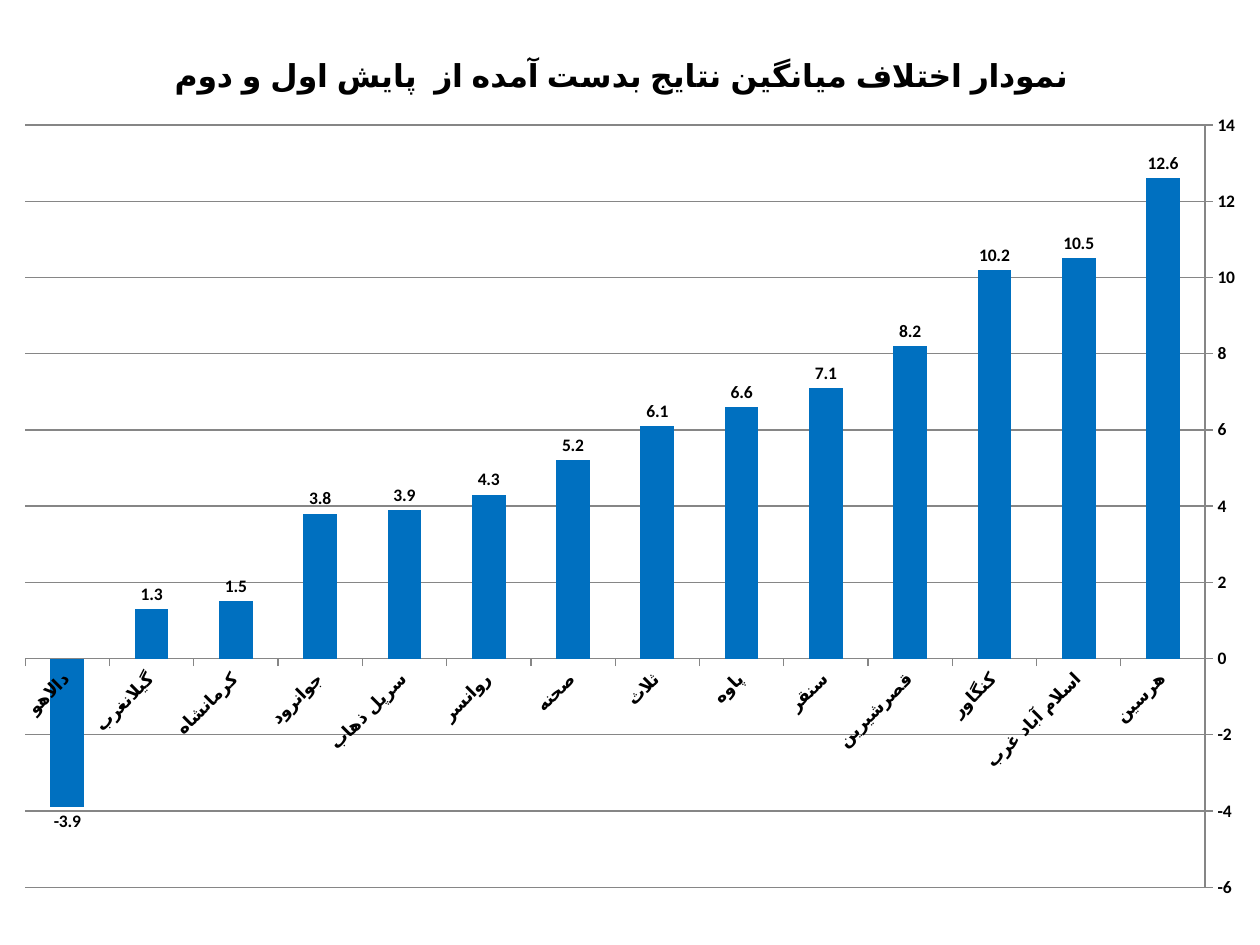
from dataclasses import dataclass

from lxml import etree
from pptx import Presentation
from pptx.chart.data import CategoryChartData
from pptx.dml.color import RGBColor
from pptx.enum import chart as ch
from pptx.oxml import ns
from pptx.util import Pt


@dataclass(frozen=True)
class Theme:
    font: str = "Calibri"
    ink: str = "000000"
    bar: str = "0070C0"
    grid: str = "868686"
    title: int = 18
    body: int = 10


THEME = Theme()
WIDE, HIGH = 720, 506  # chart size in points
TITLE = "نمودار اختلاف میانگین نتایج بدست آمده از  پایش اول و دوم  "
SCORES = {
    "هرسین": 12.6,
    "اسلام آباد غرب": 10.5,
    "کنگاور": 10.2,
    "قصرشیرین": 8.2,
    "سنقر": 7.1,
    "پاوه": 6.6,
    "ثلاث": 6.1,
    "صحنه": 5.2,
    "روانسر": 4.3,
    "سرپل ذهاب": 3.9,
    "جوانرود": 3.8,
    "کرمانشاه": 1.5,
    "گیلانغرب": 1.3,
    "دالاهو": -3.9,
}


def style(font, size, bold=True):
    font.name, font.size, font.bold = THEME.font, Pt(size), bold
    font.color.rgb = RGBColor.from_string(THEME.ink)


def rule(line):
    line.color.rgb = RGBColor.from_string(THEME.grid)
    line.width = Pt(0.75)


def add_bars(slide):
    data = CategoryChartData(number_format="General")
    data.categories = list(SCORES)
    data.add_series("Series 1", list(SCORES.values()))
    frame = slide.shapes.add_chart(
        ch.XL_CHART_TYPE.COLUMN_CLUSTERED,
        Pt(0), Pt(16.5), Pt(WIDE), Pt(HIGH), data)
    chart = frame.chart
    chart.has_legend = False
    style(chart.font, THEME.body, False)
    return chart


def set_title(chart):
    chart.has_title = True
    title = chart.chart_title
    title.include_in_layout = True
    title.text_frame.text = TITLE
    style(title.text_frame.paragraphs[0].runs[0].font, THEME.title)


def set_axes(chart):
    # Names run right to left, so the value axis sits on the right
    names, values = chart.category_axis, chart.value_axis
    names.reverse_order = True
    values.minimum_scale, values.maximum_scale = -6, 14
    values.major_unit = 2
    values.has_major_gridlines = True
    rule(values.major_gridlines.format.line)
    for axis in (names, values):
        axis.major_tick_mark = ch.XL_TICK_MARK.OUTSIDE
        axis.minor_tick_mark = ch.XL_TICK_MARK.NONE
        rule(axis.format.line)
        style(axis.tick_labels.font, THEME.body)
    # Slant the names
    body = names._element.find(ns.qn("c:txPr")).find(ns.qn("a:bodyPr"))
    body.set("rot", str(-45 * 60000))
    body.set("vert", "horz")


def set_bars(chart):
    plot = chart.plots[0]
    plot.gap_width = 150
    plot.vary_by_categories = False
    bars = plot.series[0]
    bars.invert_if_negative = False
    bars.format.fill.solid()
    bars.format.fill.fore_color.rgb = RGBColor.from_string(THEME.bar)
    labels = bars.data_labels
    labels.show_value = True
    labels.position = ch.XL_LABEL_POSITION.OUTSIDE_END
    style(labels.font, THEME.body)


def place_plot(chart, left, top, width, height):
    area = chart._chartSpace.chart.plotArea
    for old in area.findall(ns.qn("c:layout")):
        area.remove(old)
    layout = etree.Element(ns.qn("c:layout"))
    area.insert(0, layout)
    manual = etree.SubElement(layout, ns.qn("c:manualLayout"))
    parts = {"layoutTarget": "inner", "xMode": "edge", "yMode": "edge",
             "x": left / WIDE, "y": top / HIGH,
             "w": width / WIDE, "h": height / HIGH}
    for tag, val in parts.items():
        etree.SubElement(manual, ns.qn(f"c:{tag}")).set("val", str(val))


def main():
    deck = Presentation()
    deck.slide_width, deck.slide_height = Pt(720), Pt(540)
    slide = deck.slides.add_slide(deck.slide_layouts[6])

    # Chart with its title, axes and bars
    chart = add_bars(slide)
    set_title(chart)
    set_axes(chart)
    set_bars(chart)
    place_plot(chart, 14.4, 55, 674.3, 435.6)

    deck.save("out.pptx")


if __name__ == "__main__":
    main()
